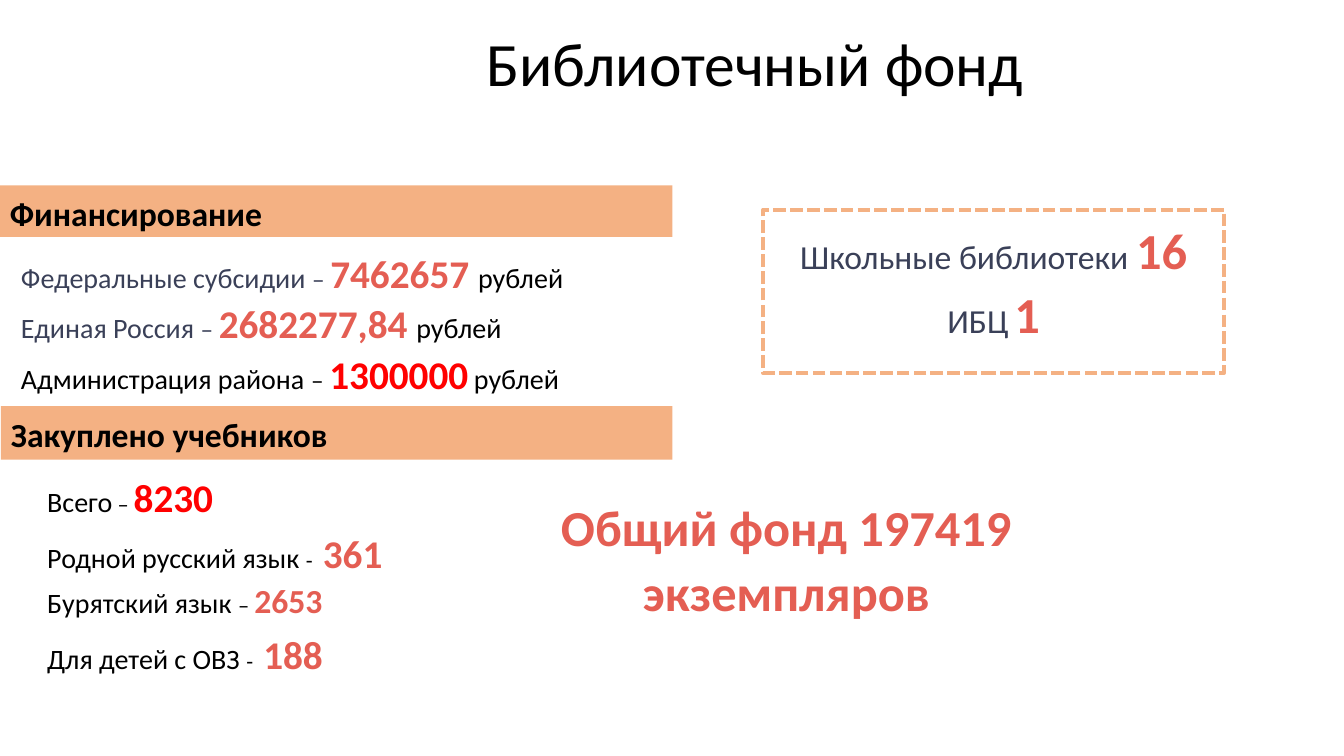
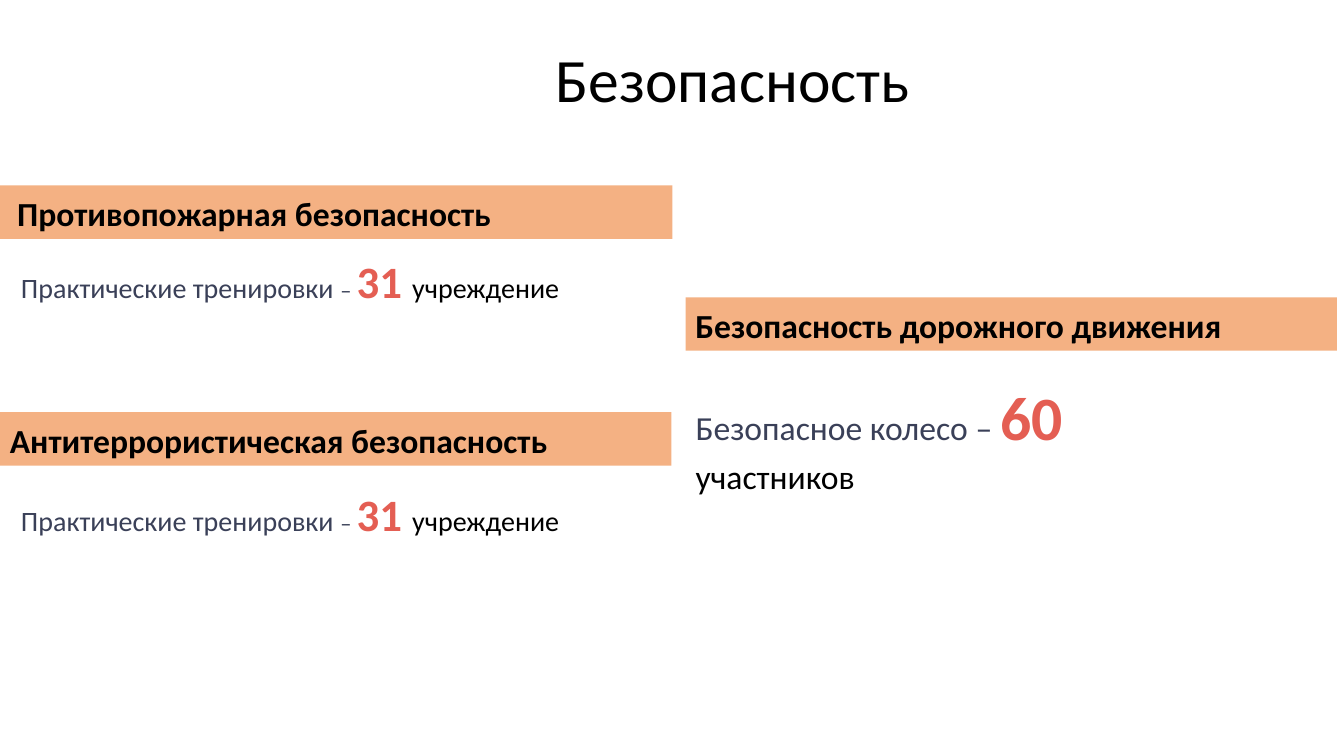
"""Build two slides on the school library stock and on safety."""
from pptx import Presentation
from pptx.dml.color import RGBColor
from pptx.enum.dml import MSO_LINE
from pptx.enum.shapes import MSO_SHAPE
from pptx.enum.text import MSO_ANCHOR, PP_ALIGN
from pptx.util import Emu, Pt

RECTANGLE = MSO_SHAPE.RECTANGLE
DASH = MSO_LINE.SQUARE_DOT
TOP, MIDDLE = MSO_ANCHOR.TOP, MSO_ANCHOR.MIDDLE
LEFT, CENTER = PP_ALIGN.LEFT, PP_ALIGN.CENTER

PX = 9144
SLIDE_SIZE = (1333, 750)
FONT = "Calibri"
BLACK, NAVY, CORAL, RED, PEACH = "000000", "3A4058", "E45E53", "FF0000", "F4B183"
INSET_X, INSET_Y = 10, 5
LINE_SPACING = 1.07
TITLE_SIZE, BAND_SIZE = 44, 24
TITLE_BOX_SIZE = (1012, 94)

DRILLS = [[("Практические тренировки ", 20, NAVY), ("– ", 16, NAVY),
           ("31 ", 32, CORAL), ("учреждение", 20, BLACK)]]

SLIDES = [
    {
        "title": ("Библиотечный фонд", 243, 12),
        "bands": [
            ("Финансирование", (0, 184, 667, 51), INSET_X),
            ("Закуплено учебников", (1, 403, 666, 53), INSET_X),
        ],
        "texts": [
            ((11, 239, 655, 161), LEFT, [
                [("Федеральные субсидии ", 20, NAVY), ("– ", 18, NAVY),
                 ("7462657 ", 28, CORAL), ("рублей", 20, BLACK)],
                [("Единая Россия ", 20, NAVY), ("– ", 18, NAVY),
                 ("2682277,84 ", 28, CORAL), ("рублей", 20, BLACK)],
                [("Администрация района ", 20, BLACK), ("– ", 18, BLACK),
                 ("1300000", 28, RED), (" ", 18, BLACK), ("рублей", 20, BLACK)],
            ]),
            ((37, 461, 516, 225), LEFT, [
                [("Всего", 20, BLACK), (" – ", 16, BLACK), ("8230", 28, RED)],
                [("Родной русский язык ", 20, BLACK), ("-", 16, BLACK),
                 (" ", 32, CORAL), ("361", 28, CORAL)],
                [("Бурятский язык ", 20, BLACK), ("– ", 16, BLACK), ("2653", 24, CORAL)],
                [("Для детей с ОВЗ ", 20, BLACK), ("-", 16, BLACK),
                 (" ", 32, CORAL), ("188", 28, CORAL)],
            ]),
            ((516, 483, 528, 160), CENTER, [
                [("Общий фонд 197419 экземпляров", 36, CORAL)],
            ]),
        ],
        "frames": [
            ((757, 208, 457, 162), [
                [("Школьные библиотеки ", 24, NAVY), ("16", 36, CORAL)],
                [("ИБЦ", 24, NAVY), (" ", 18, NAVY), ("1", 36, CORAL)],
            ]),
        ],
    },
    {
        "title": ("Безопасность", 221, 28),
        "bands": [
            ("Противопожарная безопасность", (0, 184, 667, 53), 17),
            ("Антитеррористическая безопасность", (0, 409, 666, 53), INSET_X),
            ("Безопасность дорожного движения", (680, 295, 646, 53), INSET_X),
        ],
        "texts": [
            ((11, 243, 605, 105), LEFT, DRILLS),
            ((11, 474, 592, 211), LEFT, DRILLS),
            ((680, 366, 468, 133), LEFT, [
                [("Безопасное колесо – ", 24, NAVY), ("60 ", 44, CORAL),
                 ("участников", 24, BLACK)],
            ]),
        ],
        "frames": [],
    },
]


def color(value):
    return RGBColor.from_string(value)


def to_emu(box):
    return [Emu(length * PX) for length in box]


def style(font, size, ink, bold):
    font.size = Pt(size)
    font.color.rgb = color(ink)
    font.bold = bold


def write(shape, paragraphs, align=LEFT, anchor=TOP, inset=INSET_X, bold=False):
    """Fill a shape with paragraphs of runs; coral and red figures are bold."""
    frame = shape.text_frame
    frame.word_wrap = True
    frame.vertical_anchor = anchor
    frame.margin_left, frame.margin_right = to_emu((inset, INSET_X))
    frame.margin_top = frame.margin_bottom = Emu(INSET_Y * PX)
    for index, runs in enumerate(paragraphs):
        paragraph = frame.add_paragraph() if index else frame.paragraphs[0]
        paragraph.alignment = align
        paragraph.line_spacing = LINE_SPACING
        paragraph.font.name = FONT
        for text, size, ink in runs:
            run = paragraph.add_run()
            run.text = text
            target = paragraph if len(runs) == 1 else run
            style(target.font, size, ink, bold or ink in (CORAL, RED))


def add_rectangle(slide, box):
    rectangle = slide.shapes.add_shape(RECTANGLE, *to_emu(box))
    rectangle.shadow.inherit = False
    return rectangle


def add_band(slide, heading, box, inset):
    band = add_rectangle(slide, box)
    band.fill.solid()
    band.fill.fore_color.rgb = color(PEACH)
    band.line.fill.background()
    write(band, [[(heading, BAND_SIZE, BLACK)]], inset=inset, bold=True)


def add_frame(slide, box, paragraphs):
    frame = add_rectangle(slide, box)
    frame.fill.background()
    frame.line.color.rgb = color(PEACH)
    frame.line.width = Pt(3)
    frame.line.dash_style = DASH
    write(frame, paragraphs, CENTER)


def add_text(slide, box, align, paragraphs, anchor=TOP):
    write(slide.shapes.add_textbox(*to_emu(box)), paragraphs, align, anchor)


def main():
    presentation = Presentation()
    presentation.slide_width, presentation.slide_height = to_emu(SLIDE_SIZE)
    blank = presentation.slide_layouts[6]
    for content in SLIDES:
        slide = presentation.slides.add_slide(blank)
        title, left, top = content["title"]
        add_text(slide, (left, top, *TITLE_BOX_SIZE), CENTER,
                 [[(title, TITLE_SIZE, BLACK)]], MIDDLE)
        for band in content["bands"]:
            add_band(slide, *band)
        for text in content["texts"]:
            add_text(slide, *text)
        for frame in content["frames"]:
            add_frame(slide, *frame)
    presentation.save("out.pptx")


if __name__ == "__main__":
    main()
